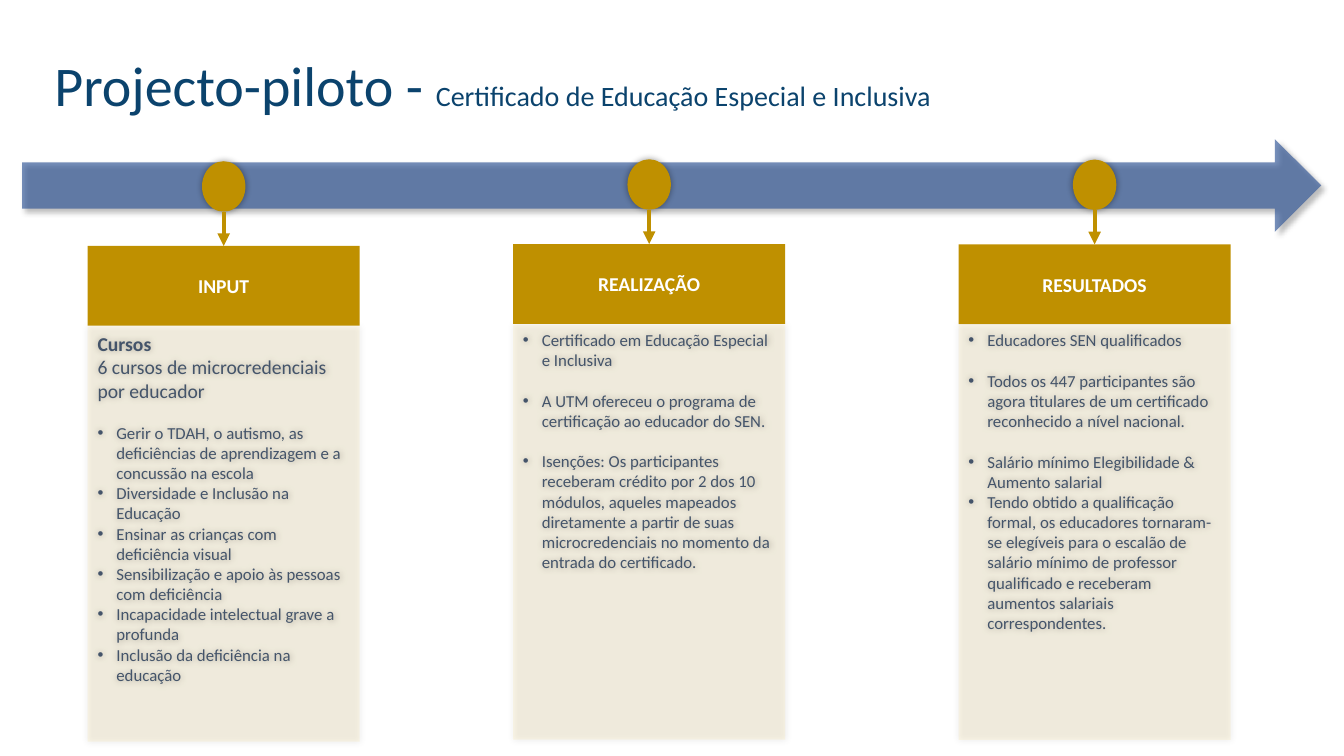
from lxml.etree import SubElement as Sub
from pptx import Presentation
from pptx.dml.color import RGBColor as RGB
from pptx.enum.shapes import MSO_CONNECTOR as LINE, MSO_SHAPE as SHAPE
from pptx.enum.text import MSO_ANCHOR as ANCHOR, PP_ALIGN as ALIGN
from pptx.oxml.ns import qn
from pptx.util import Pt

HEX = {"title": "0B436D", "arrow": "2F5597", "gold": "BF9000",
       "panel": "FFE699", "text": "44546A", "white": "FFFFFF", "shade": "000000"}
FONT = "Calibri"
GAP = 14.6  # one line of 12 pt text
INDENT = 13.5
WIDTH = 194.4

# Each item: text, size, bold, bulleted, space before
COLUMNS = [
    (62.6, 115.2, "INPUT", [
        ("Cursos", 14, True, False, 0),
        ("6 cursos de microcredenciais por educador", 14, False, False, 0),
        ("Gerir o TDAH, o autismo, as deficiências de aprendizagem e a concussão na escola",
         12, False, True, GAP),
        ("Diversidade e Inclusão na Educação", 12, False, True, 0),
        ("Ensinar as crianças com deficiência visual", 12, False, True, 0),
        ("Sensibilização e apoio às pessoas com deficiência", 12, False, True, 0),
        ("Incapacidade intelectual grave a profunda", 12, False, True, 0),
        ("Inclusão da deficiência na educação", 12, False, True, 0),
    ]),
    (366.5, 113.8, "REALIZAÇÃO", [
        ("Certificado em Educação Especial e Inclusiva", 12, False, True, 0),
        ("A UTM ofereceu o programa de certificação ao educador do SEN.",
         12, False, True, GAP),
        ("Isenções: Os participantes receberam crédito por 2 dos 10 módulos, aqueles "
         "mapeados diretamente a partir de suas microcredenciais no momento da entrada "
         "do certificado.", 12, False, True, GAP),
    ]),
    (684.7, 114, "RESULTADOS", [
        ("Educadores SEN qualificados", 12, False, True, 0),
        ("Todos os 447 participantes são agora titulares de um certificado reconhecido "
         "a nível nacional.", 12, False, True, GAP),
        ("Salário mínimo Elegibilidade & Aumento salarial", 12, False, True, GAP),
        ("Tendo obtido a qualificação formal, os educadores tornaram-se elegíveis para o "
         "escalão de salário mínimo de professor qualificado e receberam aumentos "
         "salariais correspondentes.", 12, False, True, 0),
    ]),
]


def style(font, size, color, bold=False):
    font.name, font.size, font.bold = FONT, Pt(size), bold
    font.color.rgb = RGB.from_string(HEX[color])


def block(slide, kind, box, color, alpha=100, shade=None):
    """Add a filled shape; shade is (blur, distance, angle) of its shadow."""
    shape = slide.shapes.add_shape(kind, *map(Pt, box))
    shape.fill.solid()
    shape.fill.fore_color.rgb = RGB.from_string(HEX[color])
    shape.line.fill.background()
    shape.shadow.inherit = False
    props = shape._element.spPr
    if alpha < 100:
        tint = props.find(qn("a:solidFill")).find(qn("a:srgbClr"))
        Sub(tint, qn("a:alpha"), val=str(alpha * 1000))
    if shade:
        blur, dist, angle = shade
        outer = Sub(props.find(qn("a:effectLst")), qn("a:outerShdw"),
                    blurRad=str(Pt(blur)), dist=str(Pt(dist)),
                    dir=str(angle * 60000), rotWithShape="0")
        tint = Sub(outer, qn("a:srgbClr"), val=HEX["shade"])
        Sub(tint, qn("a:alpha"), val="40000")
    return shape


def add_title(slide, left, top, width, height):
    title = slide.shapes.title
    title.left, title.top, title.width, title.height = map(Pt, (left, top, width, height))
    frame = title.text_frame
    frame.vertical_anchor = ANCHOR.MIDDLE
    para = frame.paragraphs[0]
    para.alignment, para.line_spacing = ALIGN.LEFT, 0.9
    for text, size in (("Projecto-piloto - ", 40),
                       ("Certificado de Educação Especial e Inclusiva", 20)):
        run = para.add_run()
        run.text = text
        style(run.font, size, "title")


def add_drop(slide, x, top, head):
    """Draw the arrow from the dot down to the column head."""
    line = slide.shapes.add_connector(LINE.STRAIGHT, Pt(x), Pt(top), Pt(x), head.top)
    line.end_connect(head, 0)
    line.line.width = Pt(3)
    line.line.color.rgb = RGB.from_string(HEX["gold"])
    Sub(line.line._get_or_add_ln(), qn("a:tailEnd"), type="triangle")
    Sub(line._element.spPr, qn("a:effectLst"))


def fill_list(frame, items):
    frame.word_wrap = True
    frame.vertical_anchor = ANCHOR.TOP
    for i, (text, size, bold, bullet, gap) in enumerate(items):
        para = frame.paragraphs[0] if i == 0 else frame.add_paragraph()
        para.text = text
        para.alignment = ALIGN.LEFT
        if gap:
            para.space_before = Pt(gap)
        if bullet:
            props = para._p.get_or_add_pPr()
            props.set("marL", str(Pt(INDENT)))
            props.set("indent", str(-Pt(INDENT)))
            Sub(props, qn("a:buFont"), typeface="Arial")
            Sub(props, qn("a:buChar"), char="•")
        style(para.runs[0].font, size, "text", bold)


def add_column(slide, left, top, name, items):
    mid = left + WIDTH / 2
    glow = (5, 0, 0)
    block(slide, SHAPE.OVAL, (mid - 15.5, top, 31, 36), "gold", shade=glow)
    panel = block(slide, SHAPE.RECTANGLE, (left, top + 118, WIDTH, 296.6),
                  "panel", 19, glow)
    fill_list(panel.text_frame, items)
    head = block(slide, SHAPE.RECTANGLE, (left, top + 60.5, WIDTH, 57), "gold")
    head.text_frame.text = name
    head.text_frame.vertical_anchor = ANCHOR.MIDDLE
    para = head.text_frame.paragraphs[0]
    para.alignment = ALIGN.CENTER
    style(para.runs[0].font, 14, "white", True)
    add_drop(slide, mid, top + 36, head)


def main():
    deck = Presentation()
    deck.slide_width, deck.slide_height = Pt(960), Pt(540)
    slide = deck.slides.add_slide(deck.slide_layouts[5])
    add_title(slide, 31.7, 10.8, 718.6, 104.4)
    block(slide, SHAPE.RIGHT_ARROW, (15.8, 99.4, 928, 66.2), "arrow", 65, (4, 3, 45))
    for column in COLUMNS:
        add_column(slide, *column)
    deck.save("out.pptx")


if __name__ == "__main__":
    main()
